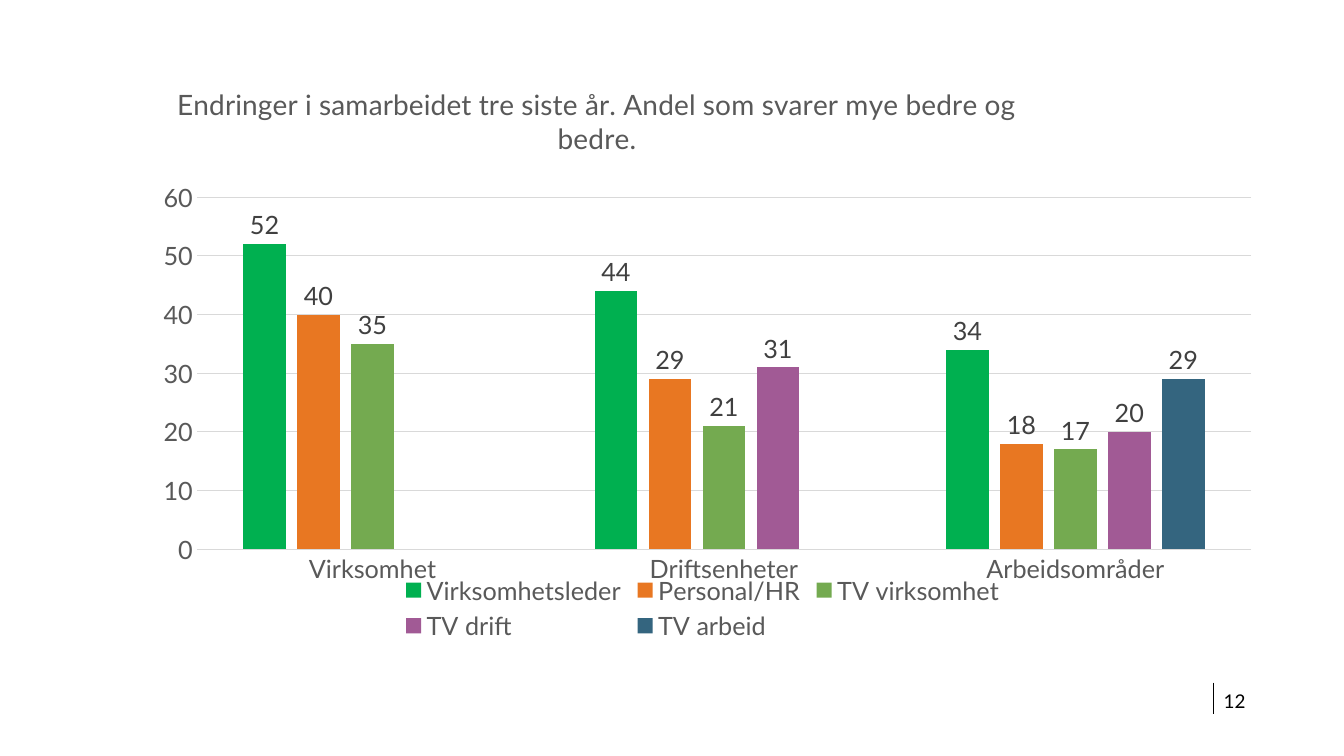
import pptx
import pptx.chart.data
import pptx.dml.color
import pptx.enum.chart
import pptx.enum.shapes
import pptx.enum.text
import pptx.oxml
import pptx.oxml.ns
import pptx.util

Cm, Pt = pptx.util.Cm, pptx.util.Pt
XL = pptx.enum.chart

COLORS = {
    "black": "000000", "text": "595959", "label": "404040", "grid": "D9D9D9",
    "leader": "00B050", "personnel": "E87722", "enterprise": "74AA50",
    "operations": "A15A95", "work": "34657F",
}
CATEGORIES = ["Virksomhet", "Driftsenheter", "Arbeidsområder"]
SERIES = [
    ("Virksomhetsleder", "leader", (52, 44, 34)),
    ("Personal/HR", "personnel", (40, 29, 18)),
    ("TV virksomhet", "enterprise", (35, 21, 17)),
    ("TV drift", "operations", (None, 31, 20)),
    ("TV arbeid", "work", (None, None, 29)),
]
TITLE = "Endringer i samarbeidet tre siste år. Andel som svarer mye bedre og bedre."


def rgb(name):
    return pptx.dml.color.RGBColor.from_string(COLORS[name])


def layout_xml(**values):
    """Manual chart layout, as fractions of the chart area."""
    items = "".join(f'<c:{k} val="{v}"/>' for k, v in values.items())
    return pptx.oxml.parse_xml(
        f'<c:layout {pptx.oxml.ns.nsdecls("c")}>'
        f"<c:manualLayout>{items}</c:manualLayout></c:layout>")


class SlideBuilder:
    font_name = "Lato"

    def __init__(self, prs):
        self.s = prs.slides.add_slide(prs.slide_layouts[6])

    def style_font(self, font, size, color):
        for key, value in {"name": self.font_name, "size": Pt(size), "bold": False}.items():
            setattr(font, key, value)
        font.color.rgb = rgb(color)

    def style_line(self, line, color):
        line.color.rgb = rgb(color)
        line.width = Pt(0.75)

    def line(self, x1, y1, x2, y2, color):
        straight = pptx.enum.shapes.MSO_CONNECTOR.STRAIGHT
        sp = self.s.shapes.add_connector(straight, Cm(x1), Cm(y1), Cm(x2), Cm(y2))
        self.style_line(sp.line, color)
        sp._element.spPr.append(pptx.oxml.parse_xml(
            f'<a:effectLst {pptx.oxml.ns.nsdecls("a")}/>'))

    def text(self, x, y, w, h, words, size, color):
        tf = self.s.shapes.add_textbox(Cm(x), Cm(y), Cm(w), Cm(h)).text_frame
        frame = {"word_wrap": True, "vertical_anchor": pptx.enum.text.MSO_ANCHOR.MIDDLE,
                 "margin_left": 0, "margin_right": 0, "margin_top": 0, "margin_bottom": 0}
        for key, value in frame.items():
            setattr(tf, key, value)
        r = tf.paragraphs[0].add_run()
        r.text = words
        self.style_font(r.font, size, color)

    def column_chart(self, x, y, w, h, title, categories, series):
        data = pptx.chart.data.CategoryChartData()
        data.categories = categories
        for name, _, values in series:
            data.add_series(name, values)
        chart = self.s.shapes.add_chart(XL.XL_CHART_TYPE.COLUMN_CLUSTERED,
                                        Cm(x), Cm(y), Cm(w), Cm(h), data).chart
        self.style_font(chart.font, 18, "text")

        # Title
        chart.has_title = True
        p = chart.chart_title.text_frame.paragraphs[0]
        r = p.add_run()
        r.text = title
        self.style_font(r.font, 20, "text")
        chart.chart_title.include_in_layout = False
        title_xml = chart.chart_title._element
        for old in title_xml.findall(pptx.oxml.ns.qn("c:layout")):
            title_xml.remove(old)
        title_xml.find(pptx.oxml.ns.qn("c:tx")).addnext(
            layout_xml(xMode="edge", yMode="edge", x=0.03, y=0.05))

        # Legend
        chart.has_legend = True
        chart.legend.position = XL.XL_LEGEND_POSITION.BOTTOM
        chart.legend.include_in_layout = False
        self.style_font(chart.legend.font, 18, "text")

        # Axes
        for axis in (chart.category_axis, chart.value_axis):
            axis.major_tick_mark = axis.minor_tick_mark = XL.XL_TICK_MARK.NONE
            self.style_font(axis.tick_labels.font, 18, "text")
        self.style_line(chart.category_axis.format.line, "grid")
        value_axis = chart.value_axis
        for key, value in {"minimum_scale": 0, "maximum_scale": 60, "major_unit": 10}.items():
            setattr(value_axis, key, value)
        value_axis.format.line.fill.background()
        self.style_line(value_axis.major_gridlines.format.line, "grid")

        # Columns and their labels
        plot = chart.plots[0]
        for key, value in {"gap_width": 219, "overlap": -27, "vary_by_categories": False}.items():
            setattr(plot, key, value)
        for column, (_, color, _) in zip(plot.series, series):
            column.format.fill.solid()
            column.format.fill.fore_color.rgb = rgb(color)
            labels = column.data_labels
            labels.show_value = True
            labels.position = XL.XL_LABEL_POSITION.OUTSIDE_END
            self.style_font(labels.font, 18, "label")

        # Plot area
        area = chart._chartSpace.chart.plotArea
        for old in area.findall(pptx.oxml.ns.qn("c:layout")):
            area.remove(old)
        area.insert(0, layout_xml(layoutTarget="inner", xMode="edge", yMode="edge",
                                  x=0.052, y=0.249, w=0.934, h=0.589))


def main():
    prs = pptx.Presentation()
    prs.slide_width, prs.slide_height = Cm(33.87), Cm(19.05)
    builder = SlideBuilder(prs)

    # Slide number with its divider
    builder.line(30.58, 17.2, 30.58, 17.98, "black")
    builder.text(30.84, 17.42, 3.43, 0.48, "12", 13.5, "black")

    # Chart
    builder.column_chart(3.48, 1.22, 28.45, 15.06, TITLE, CATEGORIES, SERIES)

    prs.save("out.pptx")


if __name__ == "__main__":
    main()
